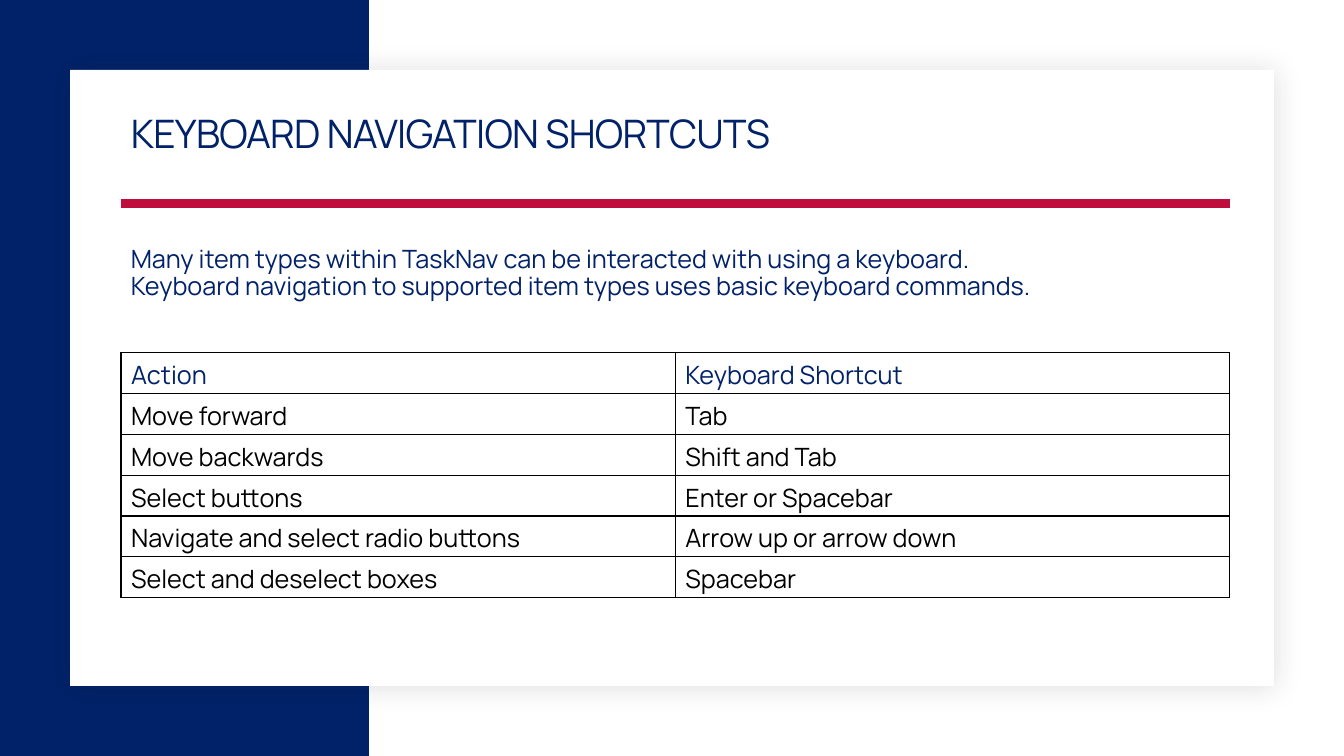
import pptx
import pptx.dml.color
import pptx.enum.shapes
import pptx.enum.text
import pptx.oxml
import pptx.oxml.ns
import pptx.util

Pt = pptx.util.Pt
RGBColor = pptx.dml.color.RGBColor
NAVY = RGBColor(0x01, 0x21, 0x69)
RED = RGBColor(0xBF, 0x0D, 0x3E)
WHITE = RGBColor(0xFF, 0xFF, 0xFF)
BLACK = RGBColor(0x00, 0x00, 0x00)
SPACE = pptx.oxml.ns.nsdecls("a")

LEFT = 86.4
WIDTH = 792
ROWS = [
    ("Action", "Keyboard Shortcut"),
    ("Move forward", "Tab"),
    ("Move backwards", "Shift and Tab"),
    ("Select buttons", "Enter or Spacebar"),
    ("Navigate and select radio buttons", "Arrow up or arrow down"),
    ("Select and deselect boxes", "Spacebar"),
]


class Deck:
    font = "Manrope"

    def __init__(self):
        self.show = pptx.Presentation()
        self.show.slide_width = Pt(960)
        self.show.slide_height = Pt(540)
        self.slide = self.show.slides.add_slide(self.show.slide_layouts[6])

    def rect(self, x, y, w, h, color):
        kind = pptx.enum.shapes.MSO_SHAPE.RECTANGLE
        shape = self.slide.shapes.add_shape(kind, Pt(x), Pt(y), Pt(w), Pt(h))
        shape.shadow.inherit = False
        shape.fill.solid()
        shape.fill.fore_color.rgb = color
        shape.line.fill.background()
        return shape

    def card(self, x, y, w, h):
        shape = self.rect(x, y, w, h, WHITE)
        glow = shape.element.spPr.find(pptx.oxml.ns.qn("a:effectLst"))
        glow.append(pptx.oxml.parse_xml(
            f'<a:outerShdw {SPACE} blurRad="{Pt(20)}" dist="{Pt(2)}" dir="2700000" algn="ctr" rotWithShape="0">'
            '<a:srgbClr val="1F2125"><a:alpha val="15000"/></a:srgbClr></a:outerShdw>'))

    def rule(self, x, y, w, color, thick):
        kind = pptx.enum.shapes.MSO_CONNECTOR.STRAIGHT
        line = self.slide.shapes.add_connector(kind, Pt(x), Pt(y), Pt(x + w), Pt(y))
        line.line.color.rgb = color
        line.line.width = Pt(thick)
        line.element.spPr.append(pptx.oxml.parse_xml(f"<a:effectLst {SPACE}/>"))

    def run(self, para, text, size, color):
        run = para.add_run()
        run.text = text
        run.font.name = self.font
        run.font.size = Pt(size)
        run.font.color.rgb = color
        return run

    def text(self, x, y, w, h, text, size, color, space, top=3.6, middle=False, track=0):
        frame = self.slide.shapes.add_textbox(Pt(x), Pt(y), Pt(w), Pt(h)).text_frame
        frame.word_wrap = True
        frame.margin_top = Pt(top)
        anchor = pptx.enum.text.MSO_ANCHOR
        frame.vertical_anchor = anchor.MIDDLE if middle else anchor.TOP
        para = frame.paragraphs[0]
        para.line_spacing = space
        run = self.run(para, text, size, color)
        if track:
            run.font._element.set("spc", str(int(track * 100)))

    def border(self, cell):
        props = cell._tc.get_or_add_tcPr()
        for side in "LRTB":
            props.append(pptx.oxml.parse_xml(
                f'<a:ln{side} {SPACE} w="{Pt(1)}"><a:solidFill><a:srgbClr val="{BLACK}"/>'
                f'</a:solidFill></a:ln{side}>'))

    def table(self, x, y, w, step, rows, size):
        table = self.slide.shapes.add_table(
            len(rows), len(rows[0]), Pt(x), Pt(y), Pt(w), Pt(step * len(rows))).table
        table.first_row = False
        table.horz_banding = False
        for i, row in enumerate(rows):
            for j, text in enumerate(row):
                cell = table.cell(i, j)
                self.border(cell)
                cell.fill.background()
                color = BLACK if i else NAVY
                self.run(cell.text_frame.paragraphs[0], text, size, color)

    def save(self):
        self.show.save("out.pptx")


def main():
    deck = Deck()
    deck.rect(0, 0, 263.5, 540, NAVY)
    deck.card(50, 50, 860, 440)
    deck.rule(LEFT, 145.4, WIDTH, RED, 6)
    deck.text(LEFT, 74.2, WIDTH, 46, "KEYBOARD NAVIGATION SHORTCUTS", 28, NAVY, 0.9,
              middle=True, track=-0.5)
    deck.table(LEFT, 251.8, WIDTH, 29.2, ROWS, 18)
    deck.text(LEFT, 149.8, 684, 94.3,
              "Many item types within TaskNav can be interacted with using a keyboard. "
              "Keyboard navigation to supported item types uses basic keyboard commands.",
              18, NAVY, 0.88, top=27)
    deck.save()


if __name__ == "__main__":
    main()
